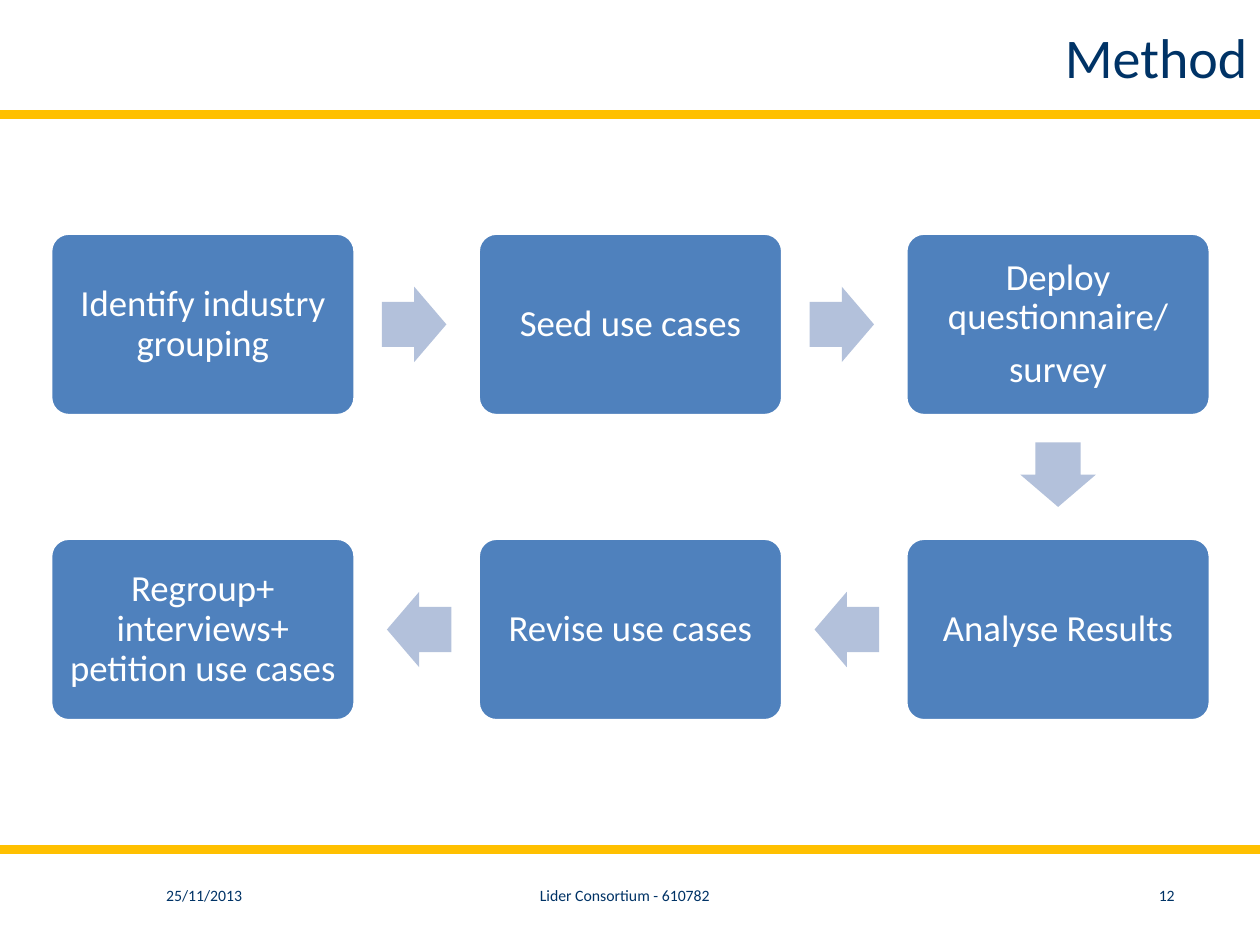
from math import cos, sin, radians

from lxml.etree import SubElement
from pptx import Presentation
from pptx.dml.color import RGBColor as RGB
from pptx.enum.shapes import MSO_CONNECTOR as Conn, MSO_SHAPE as Shape
from pptx.enum.text import MSO_ANCHOR as Anchor, PP_ALIGN as Align
from pptx.oxml.ns import qn
from pptx.util import Cm, Pt

# Content: each step has its paragraphs, grid cell and direction of the next step
STEPS = [
    (["Identify industry grouping"], (0, 0), 0),
    (["Seed use cases"], (1, 0), 0),
    (["Deploy questionnaire/", "survey"], (2, 0), 90),
    (["Analyse Results"], (2, 1), 180),
    (["Revise use cases"], (1, 1), 180),
    (["Regroup+ interviews+ petition use cases"], (0, 1), None),
]
# Text boxes: text, (left, top, width, height) in cm, style, alignment
LABELS = [
    ("25/11/2013", (3.1, 17.73, 2.59, 0.64), "footer", Align.LEFT),
    ("12", (23.11, 17.73, 1.6, 0.64), "footer", Align.LEFT),
    ("Lider Consortium - 610782", (9.09, 17.73, 7.01, 0.64), "footer", Align.CENTER),
    ("Method", (6.68, 0.15, 18.72, 1.96), "title", Align.RIGHT),
]
RULES = (2.31, 17.12)

THEME = {
    "font": "Calibri",
    "rule": RGB(0xFF, 0xC0, 0x00),
    "navy": RGB(0x00, 0x33, 0x66),
    "box": RGB(0x4F, 0x81, 0xBD),
    "arrow": RGB(0xB3, 0xC1, 0xDB),
    "white": RGB(0xFF, 0xFF, 0xFF),
    "title": 32,
    "step": 21,
    "footer": 9,
}

# Grid in cm
WIDTH, HEIGHT = 25.4, 19.05
BOX_W, BOX_H = 6.14, 3.68
LEFT, TOP = 1.02, 4.7
STEP_X, STEP_Y = 8.62, 6.15
ARROW_W, ARROW_H, ARROW_GAP = 1.3, 1.52, 0.54


def write(sp, paragraphs, size, color, align, anchor=Anchor.MIDDLE,
          inset=None, spacing=None, after=None):
    tf = sp.text_frame
    tf.word_wrap = True
    tf.vertical_anchor = anchor
    if inset is not None:
        tf.margin_left = tf.margin_right = Cm(inset)
        tf.margin_top = tf.margin_bottom = Cm(inset)
    for i, text in enumerate(paragraphs):
        p = tf.add_paragraph() if i else tf.paragraphs[0]
        p.alignment = align
        if spacing:
            p.line_spacing = spacing
        if after:
            p.space_after = Pt(after)
        r = p.add_run()
        r.text = text
        r.font.name = THEME["font"]
        r.font.size = Pt(size)
        r.font.color.rgb = color


def add_filled(s, kind, box, fill, adjustments):
    sp = s.shapes.add_shape(kind, *map(Cm, box))
    sp.shadow.inherit = False
    sp.fill.solid()
    sp.fill.fore_color.rgb = fill
    sp.line.fill.background()
    for i, value in enumerate(adjustments):
        sp.adjustments[i] = value
    return sp


def add_rule(s, y):
    line = s.shapes.add_connector(Conn.STRAIGHT, 0, Cm(y), Cm(WIDTH), Cm(y))
    line.line.color.rgb = THEME["rule"]
    line.line.width = Pt(5)
    SubElement(line._element.spPr, qn("a:effectLst"))


def add_step(s, paragraphs, cell, direction):
    x, y = LEFT + cell[0] * STEP_X, TOP + cell[1] * STEP_Y
    sp = add_filled(s, Shape.ROUNDED_RECTANGLE, (x, y, BOX_W, BOX_H),
                    THEME["box"], [0.1])
    sp.line.color.rgb = THEME["white"]
    sp.line.width = Pt(2)
    write(sp, paragraphs, THEME["step"], THEME["white"], Align.CENTER,
          inset=0.12, spacing=0.9, after=0.35 * THEME["step"])
    if direction is None:
        return
    # Arrow sits a fixed gap outside the side it leaves from
    reach = ARROW_GAP + ARROW_W / 2
    dx, dy = cos(radians(direction)), sin(radians(direction))
    cx = x + BOX_W / 2 + dx * (BOX_W / 2 + reach)
    cy = y + BOX_H / 2 + dy * (BOX_H / 2 + reach)
    arrow = add_filled(s, Shape.RIGHT_ARROW,
                       (cx - ARROW_W / 2, cy - ARROW_H / 2, ARROW_W, ARROW_H),
                       THEME["arrow"], [0.6, 0.5])
    arrow.rotation = direction


def main():
    prs = Presentation()
    prs.slide_width, prs.slide_height = Cm(WIDTH), Cm(HEIGHT)
    s = prs.slides.add_slide(prs.slide_layouts[6])

    # Horizontal rules
    for y in RULES:
        add_rule(s, y)

    # Footer and title
    for text, box, style, align in LABELS:
        sp = s.shapes.add_textbox(*map(Cm, box))
        anchor = Anchor.MIDDLE if style == "title" else Anchor.TOP
        write(sp, [text], THEME[style], THEME["navy"], align, anchor=anchor)

    # Process steps
    for step in STEPS:
        add_step(s, *step)

    prs.save("out.pptx")


if __name__ == "__main__":
    main()
